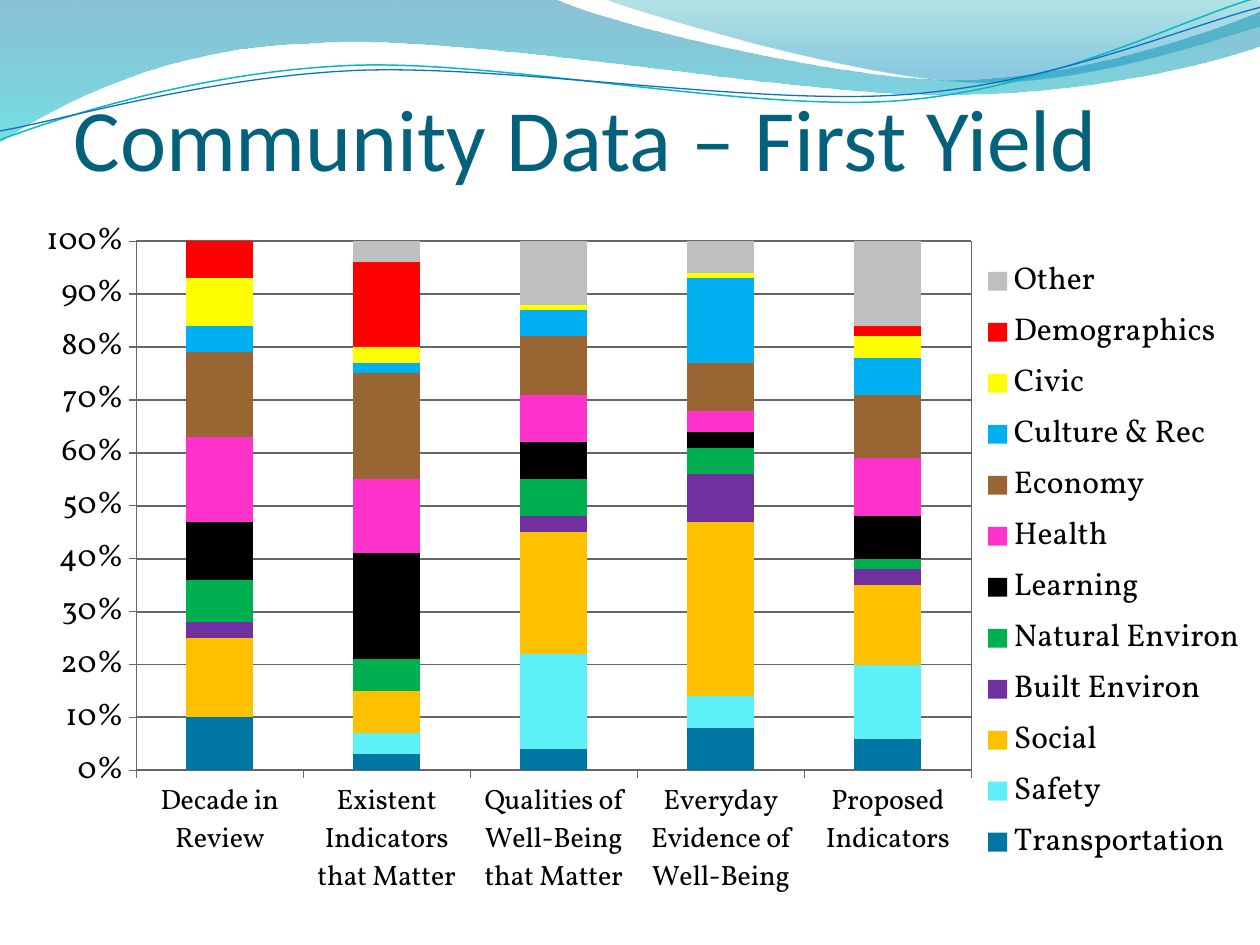
"""Build a slide with a wave header and a stacked column chart of community data."""
import math

from lxml import etree
from pptx import Presentation
from pptx import util as u
from pptx.chart import data as chart_data
from pptx.dml import color
from pptx.enum import chart as chart_enum
from pptx.enum import text
from pptx.oxml import ns, parse_xml

COLOURS = {
    "title": "04617B", "text": "000000", "grid": "666666",
    "blue": "0074A1", "aqua": "00C6CF", "teal": "00A1A9", "sky": "008BBF",
    "teal line": "0AB8BF", "blue line": "0F6FC6",
    "Transportation": "0076A3", "Safety": "5EF0F7", "Social": "FFC000",
    "Built Environ": "7030A0", "Natural Environ": "00B050", "Learning": "000000",
    "Health": "FF33CC", "Economy": "996633", "Culture & Rec": "00B0F0",
    "Civic": "FFFF00", "Demographics": "FF0000", "Other": "BFBFBF",
}
TILT = 2.7


def rgb(name):
    return color.RGBColor.from_string(COLOURS[name])


def add_wave(page, start, segments, closed):
    places = [(u.Cm(x), u.Cm(y)) for x, y in [start, *sum(segments, [])]]
    builder = page.shapes.build_freeform(*places[0])
    builder.add_line_segments(places[1:], close=closed)
    wave = builder.convert_to_shape()
    wave.shadow.inherit = False
    lines = iter(list(wave._element.spPr.iter(ns.qn("a:lnTo"))))
    for segment in segments:
        parts = [next(lines) for _ in segment]
        if len(parts) == 3:
            curve = etree.Element(ns.qn("a:cubicBezTo"))
            parts[0].addprevious(curve)
            for part in parts:
                curve.append(part[0])
                part.getparent().remove(part)
    return wave


deck = Presentation()
deck.slide_width, deck.slide_height = u.Cm(25.4), u.Cm(19.05)
page = deck.slides.add_slide(deck.slide_layouts[6])

bands = [
    ((0, 0),
     [[(11.18, -0.03)],
      [(12.09, 0.43), (16.87, 1.6), (19.25, 1.6)],
      [(21.67, 1.6), (24.33, 0.66), (25.4, 0.23)],
      [(25.43, 0.91)],
      [(24.97, 1.12), (22.1, 1.93), (18.95, 1.91)],
      [(15.8, 1.91), (9.7, 0.71), (6.53, 0.86)],
      [(3.28, 0.91), (1.17, 2.11), (-0.03, 2.87)]],
     [("blue", 0, 45), ("aqua", 1, 55)]),
    ((12.17, -0.03),
     [[(12.93, 0.28), (17.32, 1.57), (19.53, 1.65)],
      [(21.74, 1.75), (24.41, 0.81), (25.4, 0.53)],
      [(25.4, 0)]],
     [("teal", 0, 30), ("sky", 0.8, 45)]),
]
for start, segments, stops in bands:
    band = add_wave(page, start, segments, True)
    band.line.fill.background()
    band.fill.gradient()
    band.fill.gradient_angle = 270
    for stop, (name, position, _) in zip(band.fill.gradient_stops, stops):
        stop.color.rgb = rgb(name)
        stop.position = position
    tints = band._element.spPr.iter(ns.qn("a:srgbClr"))
    for tint, (_, _, opacity) in zip(list(tints), stops):
        etree.SubElement(tint, ns.qn("a:alpha"), val=str(opacity * 1000))

ripples = [
    ("teal line", 0.85, (12.67, 1.46), (0, 2.82),
     [[(1.22, 2.36), (4.01, 1.45), (7.04, 1.32)],
      [(10.03, 1.19), (15.06, 2.26), (18.11, 2.03)],
      [(21.16, 1.8), (23.83, 0.38), (25.35, -0.05)]]),
    ("blue line", 0.75, (12.69, 1.5), (0, 2.64),
     [[(1.19, 2.44), (4.17, 1.55), (7.19, 1.42)],
      [(10.24, 1.3), (15.16, 2.13), (18.21, 1.91)],
      [(21.23, 1.7), (23.9, 0.53), (25.4, 0.15)]]),
]
cos, sin = math.cos(math.radians(TILT)), math.sin(math.radians(TILT))
for name, width, (mid_x, mid_y), start, segments in ripples:
    level = [[(mid_x + (x - mid_x) * cos - (y - mid_y) * sin,
               mid_y + (x - mid_x) * sin + (y - mid_y) * cos) for x, y in segment]
             for segment in [[start], *segments]]
    ripple = add_wave(page, level[0][0], level[1:], False)
    ripple.rotation = 360 - TILT
    ripple.fill.background()
    ripple.line.color.rgb = rgb(name)
    ripple.line.width = u.Pt(width)

title = page.shapes.add_textbox(u.Cm(1.48), u.Cm(0.64), u.Cm(22.86), u.Cm(3.18))
frame = title.text_frame
frame.word_wrap = True
frame.vertical_anchor = text.MSO_ANCHOR.BOTTOM
frame.margin_left = frame.margin_right = frame.margin_bottom = 0
frame.margin_top = u.Cm(0.13)
para = frame.paragraphs[0]
para.text = "Community Data – First Yield"
para.font.name, para.font.size = "Calibri", u.Pt(50)
para.font.color.rgb = rgb("title")

shares = {
    "Transportation": (0.1, 0.03, 0.04, 0.08, 0.06),
    "Safety": (0, 0.04, 0.18, 0.06, 0.14),
    "Social": (0.15, 0.08, 0.23, 0.33, 0.15),
    "Built Environ": (0.03, 0, 0.03, 0.09, 0.03),
    "Natural Environ": (0.08, 0.06, 0.07, 0.05, 0.02),
    "Learning": (0.11, 0.2, 0.07, 0.03, 0.08),
    "Health": (0.16, 0.14, 0.09, 0.04, 0.11),
    "Economy": (0.16, 0.2, 0.11, 0.09, 0.12),
    "Culture & Rec": (0.05, 0.02, 0.05, 0.16, 0.07),
    "Civic": (0.09, 0.03, 0.01, 0.01, 0.04),
    "Demographics": (0.07, 0.16, 0, 0, 0.02),
    "Other": (0, 0.04, 0.13, 0.06, 0.17),
}
data = chart_data.CategoryChartData(number_format="0%")
data.categories = ["Decade in Review", "Existent Indicators that Matter",
                   "Qualities of Well-Being that Matter",
                   "Everyday Evidence of Well-Being", "Proposed Indicators"]
for name, values in shares.items():
    data.add_series(name, values)
chart = page.shapes.add_chart(chart_enum.XL_CHART_TYPE.COLUMN_STACKED, u.Cm(0.64),
                              u.Cm(4.24), u.Cm(24.76), u.Cm(14.17), data).chart
chart.has_title = False
chart.font.name, chart.font.size = "Vollkorn", u.Pt(18)
chart.font.color.rgb = rgb("text")
chart.has_legend = True
chart.legend.position = chart_enum.XL_LEGEND_POSITION.RIGHT
chart.legend.include_in_layout = False

plot = chart.plots[0]
plot.vary_by_categories = False
plot.overlap, plot.gap_width = 100, 150
for series in plot.series:
    series.invert_if_negative = False
    series.format.fill.solid()
    series.format.fill.fore_color.rgb = rgb(series.name)

values_axis, names_axis = chart.value_axis, chart.category_axis
for axis in (values_axis, names_axis):
    axis.major_tick_mark = chart_enum.XL_TICK_MARK.OUTSIDE
    axis.format.line.color.rgb = rgb("grid")
    axis.format.line.width = u.Pt(0.75)
names_axis.tick_labels.font.size = u.Pt(16)
values_axis.minimum_scale, values_axis.maximum_scale = 0, 1
values_axis.major_unit = 0.1
values_axis.tick_labels.number_format = "0%"
values_axis.tick_labels.number_format_is_linked = False
values_axis.has_major_gridlines = True
values_axis.major_gridlines.format.line.color.rgb = rgb("grid")
values_axis.major_gridlines.format.line.width = u.Pt(1.1)

area = chart._chartSpace.chart.plotArea
for old in area.findall(ns.qn("c:layout")):
    area.remove(old)
layout = etree.Element(ns.qn("c:layout"))
manual = etree.SubElement(layout, ns.qn("c:manualLayout"))
for tag, value in (("layoutTarget", "inner"), ("xMode", "edge"), ("yMode", "edge"),
                   ("x", "0.085"), ("y", "0.044"), ("w", "0.68"), ("h", "0.753")):
    etree.SubElement(manual, ns.qn(f"c:{tag}"), val=value)
area.insert(0, layout)
area.append(parse_xml(
    f'<c:spPr {ns.nsdecls("c", "a")}><a:noFill/><a:ln w="9525"><a:solidFill>'
    f'<a:srgbClr val="{COLOURS["grid"]}"/></a:solidFill></a:ln></c:spPr>'))

deck.save("out.pptx")
